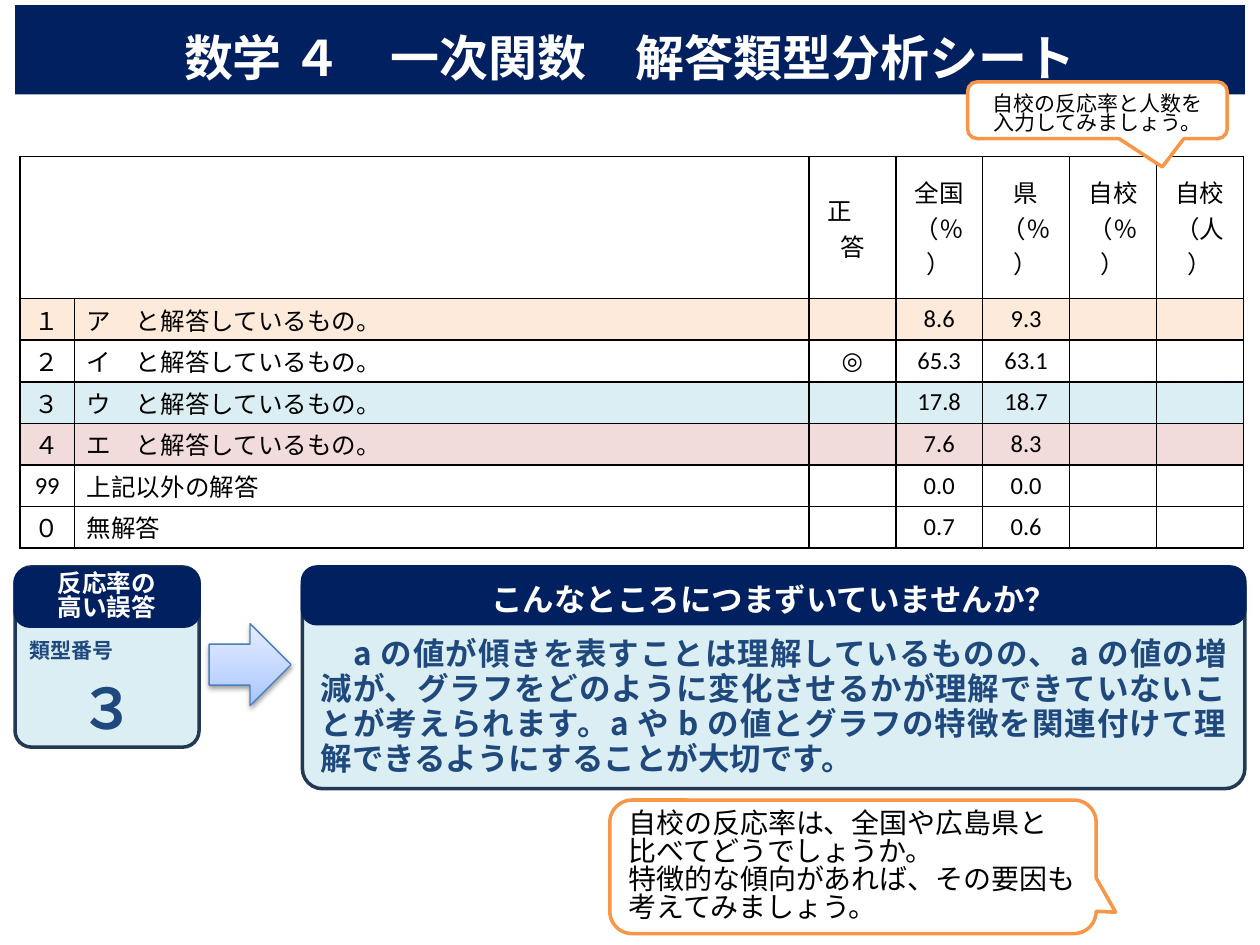
from dataclasses import dataclass

from lxml import etree
from pptx import Presentation
from pptx.dml.color import RGBColor
from pptx.enum.shapes import MSO_SHAPE as SHAPE
from pptx.enum.text import MSO_ANCHOR as ANCHOR, PP_ALIGN as ALIGN
from pptx.oxml import parse_xml
from pptx.oxml.ns import nsdecls, qn
from pptx.util import Inches, Pt


@dataclass(frozen=True)
class Theme:
    navy: str = "002060"
    edge: str = "233953"
    blue: str = "1F497D"
    pale: str = "DBEEF4"
    peach: str = "FDEADA"
    pink: str = "F2DCDB"
    orange: str = "F79646"
    arrow_line: str = "4B7EBC"
    white: str = "FFFFFF"
    black: str = "000000"
    font: str = "Noto Sans CJK JP"
    table_font: str = "Calibri"
    title: int = 28
    number: int = 32
    heading: int = 18
    note: int = 16
    table: int = 14
    small: int = 12


T = Theme()
HEADERS = ["正　答", "全国（％）", "県（％）", "自校（％）", "自校（人）"]
ROWS = [
    ("１", "ア　と解答しているもの。", "", "8.6", "9.3", T.peach),
    ("２", "イ　と解答しているもの。", "◎", "65.3", "63.1", None),
    ("３", "ウ　と解答しているもの。", "", "17.8", "18.7", T.pale),
    ("４", "エ　と解答しているもの。", "", "7.6", "8.3", T.pink),
    ("99", "上記以外の解答", "", "0.0", "0.0", None),
    ("０", "無解答", "", "0.7", "0.6", None),
]


def rgb(value):
    return RGBColor.from_string(value)


def style(p, size, color, bold=False, align=None, name=T.font):
    """Format a paragraph, for Latin and East Asian characters alike."""
    p.alignment = align
    font = p.font
    font.size, font.bold, font.name = Pt(size), bold, name
    font.color.rgb = rgb(color)
    etree.SubElement(p._p.pPr.find(qn("a:defRPr")), qn("a:ea"), typeface=T.font)


def write(tf, lines, size, color, bold=False, align=ALIGN.CENTER,
          anchor=ANCHOR.MIDDLE, spacing=()):
    tf.word_wrap = True
    tf.vertical_anchor = anchor
    for i, line in enumerate(lines):
        p = tf.paragraphs[0] if i == 0 else tf.add_paragraph()
        p.text = line
        if spacing:
            p.line_spacing = Pt(spacing[min(i, len(spacing) - 1)])
        style(p, size, color, bold, align)


def add_shape(s, kind, box, fill, line, adjustments=(), width=2):
    sp = s.shapes.add_shape(kind, *map(Inches, box))
    sp.shadow.inherit = False
    sp.fill.solid()
    sp.fill.fore_color.rgb = rgb(fill)
    sp.line.color.rgb = rgb(line)
    sp.line.width = Pt(width)
    for i, value in enumerate(adjustments):
        sp.adjustments[i] = value
    return sp


def add_panel(s, box):
    return add_shape(s, SHAPE.ROUNDED_RECTANGLE, box, T.pale, T.edge, [0.09])


def add_panel_heading(s, box, lines, size, spacing):
    sp = add_shape(s, SHAPE.ROUNDED_RECTANGLE, box, T.navy, T.navy, [0.255])
    write(sp.text_frame, lines, size, T.white, True, spacing=[spacing])


def add_callout(s, box, tail, lines, size, align, spacing):
    sp = add_shape(s, SHAPE.ROUNDED_RECTANGULAR_CALLOUT, box, T.white, T.orange,
                   [*tail, 0.167])
    write(sp.text_frame, lines, size, T.black, align=align, spacing=spacing)


def add_arrow(s, box):
    """Add a right arrow with a three-stop gradient and a soft shadow."""
    sp = add_shape(s, SHAPE.RIGHT_ARROW, box, T.white, T.arrow_line, width=0.75)
    stops = "".join(
        f'<a:gs pos="{pos}"><a:srgbClr val="{color}"/></a:gs>'
        for pos, color in [(0, "A4C4FF"), (35000, "BFD4FF"), (100000, "E6EEFF")])
    gradient = parse_xml(
        f'<a:gradFill {nsdecls("a")}><a:gsLst>{stops}</a:gsLst>'
        '<a:lin ang="16200000" scaled="1"/></a:gradFill>')
    spPr = sp.element.spPr
    spPr.replace(spPr.find(qn("a:solidFill")), gradient)
    spPr.find(qn("a:effectLst")).append(parse_xml(
        f'<a:outerShdw {nsdecls("a")} blurRad="{Pt(3.1)}" dist="{Pt(1.6)}" '
        'dir="5400000" rotWithShape="0"><a:srgbClr val="000000">'
        '<a:alpha val="38000"/></a:srgbClr></a:outerShdw>'))


def format_cell(cell, text="", align=ALIGN.CENTER, fill=None, vertical=False):
    cell.margin_top = cell.margin_bottom = Inches(0.02)
    cell.vertical_anchor = ANCHOR.MIDDLE
    tcPr = cell._tc.get_or_add_tcPr()
    if vertical:
        tcPr.set("vert", "eaVert")
    for side in ("lnL", "lnR", "lnT", "lnB"):
        tcPr.append(parse_xml(
            f'<a:{side} {nsdecls("a")} w="{Pt(1)}"><a:solidFill>'
            f'<a:srgbClr val="{T.black}"/></a:solidFill></a:{side}>'))
    if fill:
        cell.fill.solid()
        cell.fill.fore_color.rgb = rgb(fill)
    else:
        cell.fill.background()
    p = cell.text_frame.paragraphs[0]
    if text:
        p.text = text
    else:
        etree.SubElement(p._p, qn("a:endParaRPr"), sz=str(T.table * 100))
    style(p, T.table, T.black, align=align, name=T.table_font)


def add_answer_table(s):
    widths = [0.43, 5.83] + [0.69] * len(HEADERS)
    heights = [1.13] + [0.33] * len(ROWS)
    box = map(Inches, (0.16, 1.24, sum(widths), sum(heights)))
    table = s.shapes.add_table(len(heights), len(widths), *box).table
    table.first_row = table.horz_banding = False
    for column, width in zip(table.columns, widths):
        column.width = Inches(width)
    for row, height in zip(table.rows, heights):
        row.height = Inches(height)
    for c, text in enumerate(["", "", *HEADERS]):
        format_cell(table.cell(0, c), text, vertical=c > 1)
    table.cell(0, 0).merge(table.cell(0, 1))
    for r, (*values, fill) in enumerate(ROWS, 1):
        for c, text in enumerate([*values, "", ""]):
            align = ALIGN.JUSTIFY if c == 1 else ALIGN.CENTER
            format_cell(table.cell(r, c), text, align, fill)


def add_title(s):
    title = s.shapes.title
    title.left, title.top, title.width, title.height = map(
        Inches, (0.12, 0.04, 9.76, 0.71))
    title.fill.solid()
    title.fill.fore_color.rgb = rgb(T.navy)
    title.text_frame.margin_top = Inches(0.16)
    write(title.text_frame, ["数学 ４　一次関数　解答類型分析シート"],
          T.title, T.white, True)


def add_wrong_answer(s):
    tf = add_panel(s, (0.12, 4.5, 1.46, 1.43)).text_frame
    tf.margin_top, tf.margin_bottom = Inches(0.8), 0
    write(tf, ["３"], T.number, T.blue, True)
    add_panel_heading(s, (0.12, 4.51, 1.46, 0.46), ["反応率の", "高い誤答"], T.table, 14)
    label = s.shapes.add_textbox(*map(Inches, (0.06, 5.01, 1.02, 0.3)))
    write(label.text_frame, ["類型番号"], T.small, T.blue, True, anchor=ANCHOR.TOP)


def add_stumbling_point(s):
    panel = add_panel(s, (2.4, 4.5, 7.48, 1.76))
    write(panel.text_frame, [
        "　a の値が傾きを表すことは理解しているものの、 a の値の増減が、"
        "グラフをどのように変化させるかが理解できていないことが考えられます。"
        "a や b の値とグラフの特徴を関連付けて理解できるようにすることが大切です。"],
        T.heading, T.blue, True, ALIGN.JUSTIFY, ANCHOR.BOTTOM, [20])
    add_panel_heading(s, (2.4, 4.5, 7.48, 0.45),
                      ["こんなところにつまずいていませんか？"], T.heading, 26)


def main():
    prs = Presentation()
    prs.slide_width, prs.slide_height = Inches(10), Inches(7.5)
    s = prs.slides.add_slide(prs.slide_layouts[5])
    add_title(s)
    add_answer_table(s)
    add_wrong_answer(s)
    add_arrow(s, (1.66, 4.95, 0.65, 0.65))
    add_stumbling_point(s)
    add_callout(s, (4.84, 6.35, 3.86, 1.06), (0.54, 0.34), [
        "自校の反応率は、全国や広島県と", "比べてどうでしょうか。",
        "特徴的な傾向があれば、その要因も", "考えてみましょう。"],
        T.note, ALIGN.LEFT, [16])
    add_callout(s, (7.68, 0.65, 2.06, 0.45), (0.25, 1),
                ["自校の反応率と人数を", "入力してみましょう。"],
                T.small, ALIGN.CENTER, [17, 11])
    prs.save("out.pptx")


if __name__ == "__main__":
    main()
